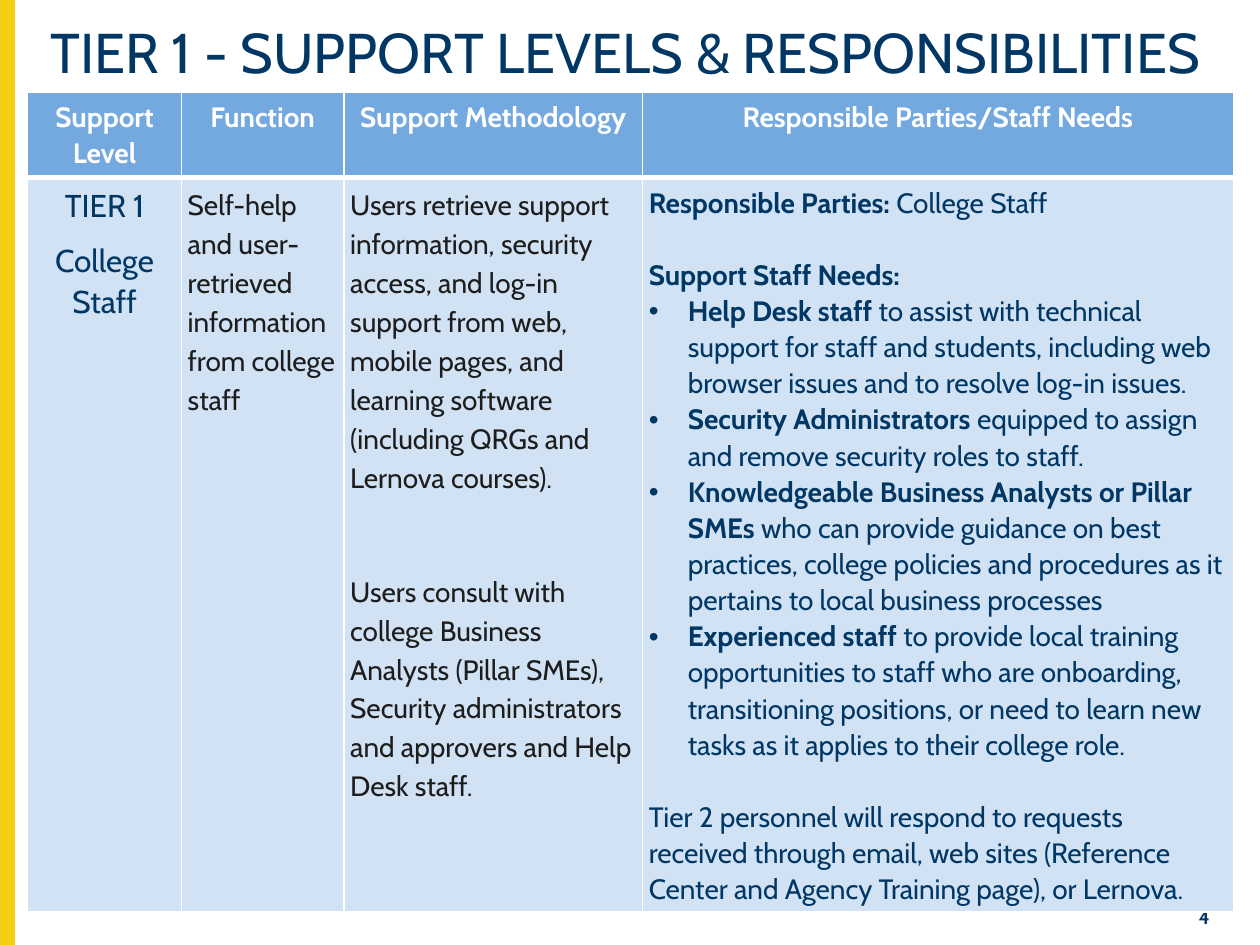
from lxml.etree import SubElement
from pptx import Presentation
from pptx.dml.color import RGBColor as Color
from pptx.enum.shapes import MSO_SHAPE as Shape
from pptx.enum.text import MSO_ANCHOR as Anchor, PP_ALIGN as Align
from pptx.oxml.ns import qn
from pptx.util import Emu, Inches, Pt

THEME = dict(
    font="Cabin", navy="003764", ink="1D1D1D", white="FFFFFF",
    yellow="F4CE12", header="74A9DF", body="D1E2F4",
    title=32, tier=18, text=16, number=11,
)
LINE_GAP = 20.5  # one line of table text, in points


def write(frame, text, size=THEME["text"], color=THEME["navy"], bold=False,
          lead="", align=Align.LEFT, spacing=1.07, after=0, bullet=False):
    """Add a paragraph, opened by an optional bold lead-in."""
    para = frame.paragraphs[0]
    if para.runs:
        para = frame.add_paragraph()
    para.alignment, para.line_spacing = align, spacing
    para.space_before, para.space_after = Pt(0), Pt(after)
    for words, strong in ((lead, True), (text, bold)):
        if words:
            span = para.add_run()
            span.text = words
            span.font.name, span.font.size = THEME["font"], Pt(size)
            span.font.bold = strong
            span.font.color.rgb = Color.from_string(color)
    if bullet:
        props = para._p.get_or_add_pPr()
        props.set("marL", str(Inches(0.31)))
        props.set("indent", str(-Inches(0.31)))
        SubElement(props, qn("a:buFont"), typeface="Arial")
        SubElement(props, qn("a:buChar"), char="•")


def style_cell(cell, fill, top=1, bottom=1):
    """Give a table cell its margins, white borders and fill."""
    cell.margin_left = cell.margin_right = Inches(0.05)
    cell.margin_top = cell.margin_bottom = Inches(0.05)
    props = cell._tc.get_or_add_tcPr()
    for side, points in (("L", 1), ("R", 1), ("T", top), ("B", bottom)):
        line = SubElement(props, qn(f"a:ln{side}"), w=str(Pt(points)))
        paint = SubElement(line, qn("a:solidFill"))
        SubElement(paint, qn("a:srgbClr"), val=THEME["white"])
    cell.fill.solid()
    cell.fill.fore_color.rgb = Color.from_string(fill)


deck = Presentation()
deck.slide_width, deck.slide_height = Inches(10), Inches(7.5)
page = deck.slides.add_slide(deck.slide_layouts[5])
wide, high = deck.slide_width, deck.slide_height
left = Inches(0.22)

# Yellow edge
edge = page.shapes.add_shape(Shape.RECTANGLE, 0, 0, Inches(0.11), high)
edge.shadow.inherit = False
edge.fill.solid()
edge.fill.fore_color.rgb = Color.from_string(THEME["yellow"])
edge.line.color.rgb = Color.from_string(THEME["yellow"])
edge.line.width = Pt(1)

# Page number
box = page.shapes.add_textbox(Emu(int(wide * 0.92)), Inches(7.17),
                              Emu(int(wide * 0.05)), Inches(0.21))
box.text_frame.word_wrap = True
box.text_frame.margin_top = box.text_frame.margin_bottom = Inches(0.05)
box.text_frame.vertical_anchor = Anchor.MIDDLE
write(box.text_frame, "4", size=THEME["number"], bold=True,
      align=Align.RIGHT, spacing=1)

# Title
title = page.shapes.title
title.left, title.top = left, Inches(0.11)
title.width, title.height = Inches(9.49), Inches(0.66)
title.text_frame.word_wrap = True
title.text_frame.vertical_anchor = Anchor.MIDDLE
write(title.text_frame, "TIER 1 - SUPPORT LEVELS & RESPONSIBILITIES",
      size=THEME["title"], align=Align.CENTER, spacing=0.9)

# Table grid
columns = {
    "Support Level": 1.22,
    "Function": 1.29,
    "Support Methodology": 2.37,
    "Responsible Parties/Staff Needs": 4.69,
}
rows = (0.68, 5.83)
table = page.shapes.add_table(
    len(rows), len(columns), left, Inches(0.73),
    Inches(sum(columns.values())), Inches(sum(rows))).table
for row, height in zip(table.rows, rows):
    row.height = Inches(height)
for index, (heading, width) in enumerate(columns.items()):
    table.columns[index].width = Inches(width)
    head, body = table.cell(0, index), table.cell(1, index)
    style_cell(head, THEME["header"], bottom=3)
    style_cell(body, THEME["body"], top=3)
    write(head.text_frame, heading, color=THEME["white"], bold=True,
          align=Align.CENTER)
level, function, method, needs = (
    table.cell(1, index).text_frame for index in range(len(columns)))

# Support level
for text in ("TIER 1", "College Staff"):
    write(level, text, size=THEME["tier"], align=Align.CENTER, after=8)

# Function
write(function, "Self-help and user-retrieved information from college staff",
      color=THEME["ink"], spacing=1.15, after=20)

# Support methodology
for text in (
    "Users retrieve support information, security access, and log-in support "
    "from web, mobile pages, and learning software (including QRGs and "
    "Lernova courses).",
    "Users consult with college Business Analysts (Pillar SMEs), Security "
    "administrators and approvers and Help Desk staff.",
):
    write(method, text, color=THEME["ink"], spacing=1.15, after=43)

# Responsible parties and staff needs
staff_needs = {
    "Help Desk staff ":
        "to assist with technical support for staff and students, including "
        "web browser issues and to resolve log-in issues.",
    "Security Administrators ":
        "equipped to assign and remove security roles to staff.",
    "Knowledgeable Business Analysts or Pillar SMEs ":
        "who can provide guidance on best practices, college policies and "
        "procedures as it pertains to local business processes",
    "Experienced staff ":
        "to provide local training opportunities to staff who are onboarding, "
        "transitioning positions, or need to learn new tasks as it applies to "
        "their college role.",
}
write(needs, "College Staff", lead="Responsible Parties: ", after=LINE_GAP)
write(needs, "Support Staff Needs:", bold=True)
for role, duty in staff_needs.items():
    last = role == list(staff_needs)[-1]
    write(needs, duty, lead=role, bullet=True, after=LINE_GAP if last else 0)
write(needs, "Tier 2 personnel will respond to requests received through "
      "email, web sites (Reference Center and Agency Training page), or "
      "Lernova.")

deck.save("out.pptx")
